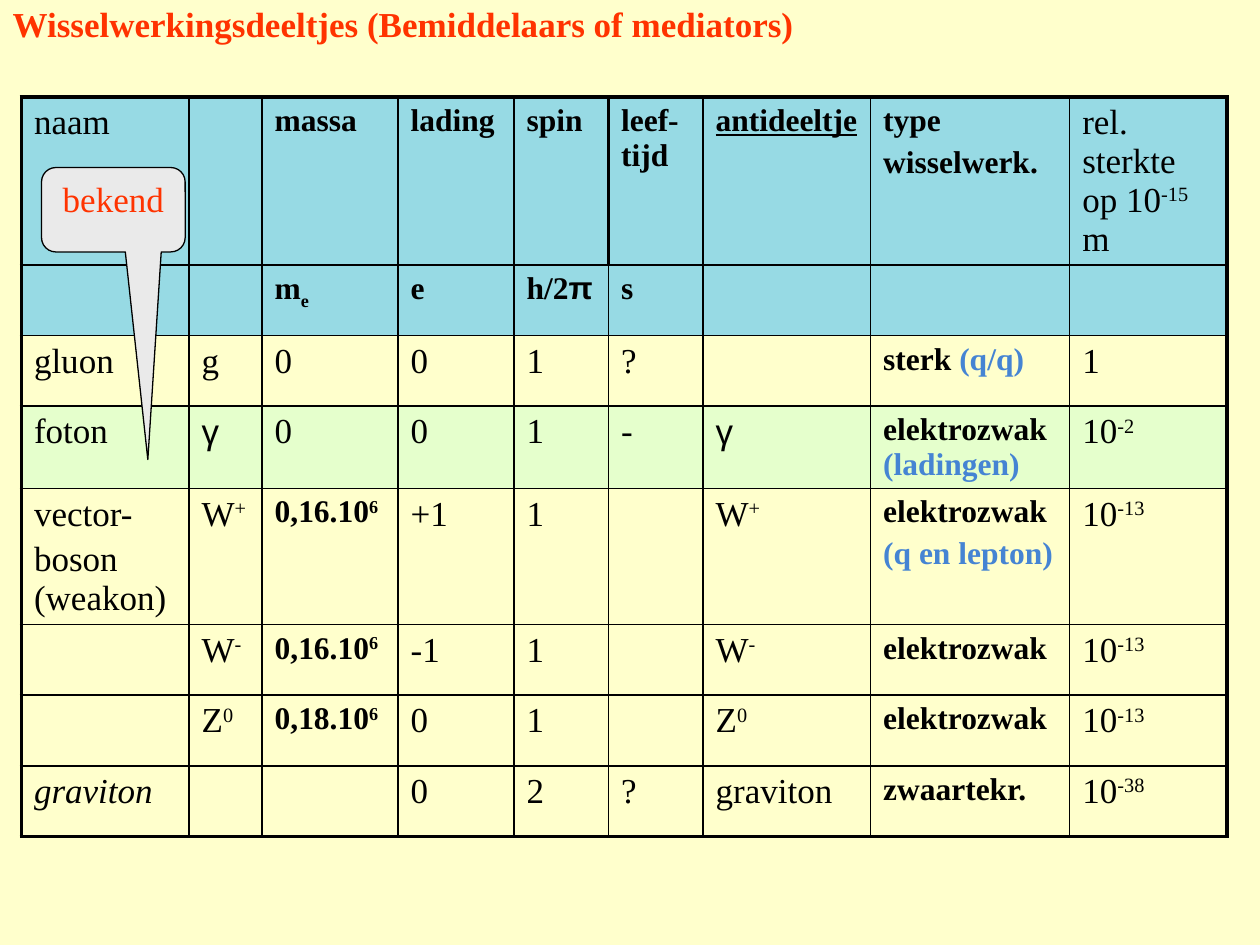
from itertools import groupby
from lxml.etree import SubElement
from pptx import Presentation
from pptx.dml.color import RGBColor
from pptx.enum.shapes import MSO_SHAPE
from pptx.enum.text import MSO_ANCHOR, PP_ALIGN
from pptx.oxml.ns import qn
from pptx.util import Inches, Pt

HUES = {"page": "FFFFCC", "ink": "000000", "red": "FF3300", "blue": "4584D3",
        "head": "31B6FD", "foton": "CCFFCC", "grey": "EAEAEA"}
SERIF, SANS = "Times New Roman", "Arial"
COLS = [1.33, 0.58, 1.08, 0.92, 0.75, 0.75, 1.33, 1.58, 1.25]
ROW = 0.56
THIN, MID, THICK = 1, 1.5, 2.25

# Cell marks: leading * bold, = underline, ~ italic; | new paragraph;
# ^..^ superscript, _.._ subscript, #..# blue
ROWS = [
    ["naam", "", "*massa", "*lading", "*spin", "*leef-tijd", "*=antideeltje",
     "*type|wisselwerk.", "rel. sterkte op 10^-15 ^m"],
    ["", "", "*m_e_", "*e", "*h/2π", "*s", "", "", ""],
    ["gluon", "g", "0", "0", "1", "?", "", "*sterk #(q/q)#", "1"],
    ["foton", "γ", "0", "0", "1", "-", "γ", "*elektrozwak#(ladingen)#", "10^-2^"],
    ["vector-|boson (weakon)", "W^+^", "*0,16.10^6^", "+1", "1", "", "W^+^",
     "*elektrozwak|#(q en lepton)#", "10^-13^"],
    ["", "W^-^", "*0,16.10^6^", "-1", "1", "", "W^-^", "*elektrozwak", "10^-13^"],
    ["", "Z^0^", "*0,18.10^6^", "0", "1", "", "Z^0^", "*elektrozwak", "10^-13^"],
    ["~graviton", "", "", "0", "2", "?", "graviton", "*zwaartekr.", "10^-38^"],
]
FILLS = {0: "head", 1: "head", 3: "foton"}
BASES = {"^": "30000", "_": "-25000"}


def tone(name):
    return RGBColor.from_string(HUES[name])


def add_run(para, text, hue="ink", **form):
    run = para.add_run()
    run.text = text
    run.font.color.rgb = tone(hue)
    for key, val in ({"name": SERIF, "size": Pt(20)} | form).items():
        setattr(run.font, key, val)
    return run


def split_marks(text):
    """Yield (mark, is Greek, text) for each evenly formatted stretch."""
    mark, parts = "", []
    for char in text:
        if char in "^_#":
            mark = "" if mark == char else char
        else:
            parts.append((mark, char in "γπ", char))
    for (mark, greek), group in groupby(parts, lambda part: part[:2]):
        yield mark, greek, "".join(part[2] for part in group)


def write_cell(cell, text):
    form = {}
    while text and text[0] in "*=~":
        flag = {"*": "bold", "=": "underline", "~": "italic"}[text[0]]
        form[flag] = True
        text = text[1:]
    if "bold" in form:
        form["size"] = Pt(18)
    for idx, line in enumerate(text.split("|")):
        para = cell.text_frame.add_paragraph() if idx else cell.text_frame.paragraphs[0]
        if idx:
            para.space_before = Pt(4)
        for mark, greek, part in split_marks(line):
            run = add_run(para, part, "blue" if mark == "#" else "ink",
                          **form | {"name": SANS if greek else SERIF})
            if mark in BASES:
                run.font._element.set("baseline", BASES[mark])


def edge_widths(row, col):
    """Widths of the left, right, top and bottom borders."""
    last_row, last_col = len(ROWS) - 1, len(COLS) - 1
    left = THICK if col == 0 else MID if row == 0 and col in (4, 5) else THIN
    right = THICK if col == last_col else MID if row == 0 and col in (3, 4) else THIN
    top = THICK if row == 0 else MID if (row, col) == (1, 4) else THIN
    low = THICK if row == last_row else MID if (row, col) == (0, 4) else THIN
    return zip("LRTB", (left, right, top, low))


def style_cell(cell, row, col):
    props = cell._tc.get_or_add_tcPr()
    for side, width in edge_widths(row, col):
        line = SubElement(props, qn(f"a:ln{side}"), w=str(Pt(width)))
        fill = SubElement(line, qn("a:solidFill"))
        SubElement(fill, qn("a:srgbClr"), val=HUES["ink"])
    if row in FILLS:
        cell.fill.solid()
        cell.fill.fore_color.rgb = tone(FILLS[row])
        shade = props.find(qn("a:solidFill")).find(qn("a:srgbClr"))
        SubElement(shade, qn("a:alpha"), val="50000")
    else:
        cell.fill.background()


def add_grid(slide, left, top):
    size = Inches(sum(COLS)), Inches(ROW * len(ROWS))
    grid = slide.shapes.add_table(len(ROWS), len(COLS), left, top, *size).table
    grid.first_row = grid.horz_banding = False
    for col, width in zip(grid.columns, COLS):
        col.width = Inches(width)
    for row, texts in enumerate(ROWS):
        grid.rows[row].height = Inches(ROW)
        for col, text in enumerate(texts):
            write_cell(grid.cell(row, col), text)
            style_cell(grid.cell(row, col), row, col)


def add_title(slide, *box):
    title = slide.shapes.title
    title.left, title.top, title.width, title.height = box
    frame = title.text_frame
    frame.vertical_anchor = MSO_ANCHOR.TOP
    frame.margin_top = Inches(0.02)
    para = frame.paragraphs[0]
    para.alignment = PP_ALIGN.LEFT
    add_run(para, "Wisselwerkingsdeeltjes (Bemiddelaars of mediators)", "red", bold=True)


def add_callout(slide, *box):
    shape = slide.shapes.add_shape(MSO_SHAPE.ROUNDED_RECTANGULAR_CALLOUT, *box)
    for idx, val in enumerate((0.24, 2.96, 0.17)):
        shape.adjustments[idx] = val
    shape.shadow.inherit = False
    shape.fill.solid()
    shape.fill.fore_color.rgb = tone("grey")
    shape.line.color.rgb = tone("ink")
    shape.line.width = Pt(0.75)
    shape.text_frame.vertical_anchor = MSO_ANCHOR.TOP
    para = shape.text_frame.paragraphs[0]
    para.alignment = PP_ALIGN.CENTER
    add_run(para, "bekend", "red")


def main():
    deck = Presentation()
    deck.slide_width, deck.slide_height = Inches(10), Inches(7.5)
    slide = deck.slides.add_slide(deck.slide_layouts[5])
    slide.background.fill.solid()
    slide.background.fill.fore_color.rgb = tone("page")
    add_title(slide, 0, 0, deck.slide_width, Inches(0.67))
    add_grid(slide, Inches(0.17), Inches(0.77))
    add_callout(slide, Inches(0.33), Inches(1.33), Inches(1.14), Inches(0.67))
    deck.save("out.pptx")


if __name__ == "__main__":
    main()
